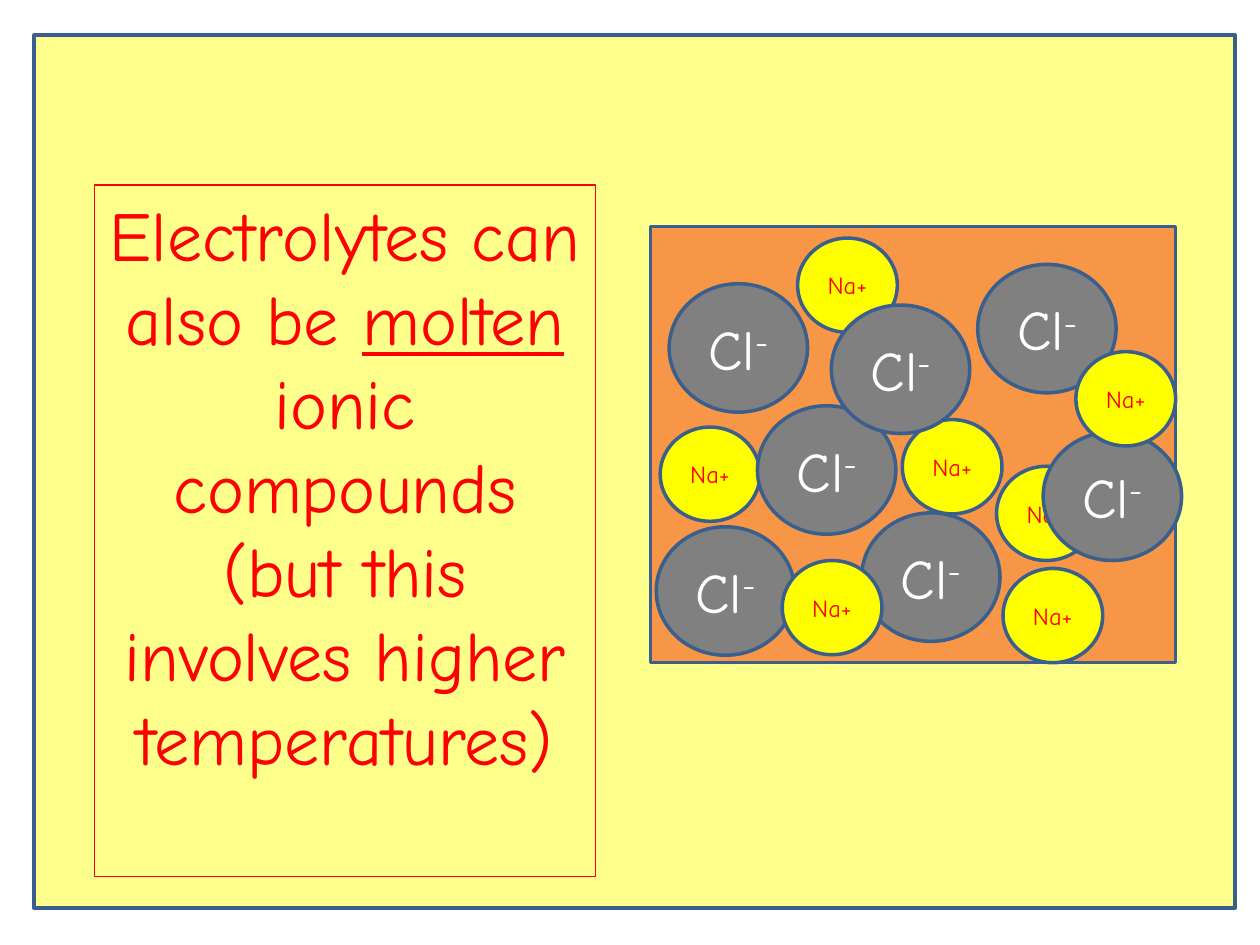
from pptx import Presentation
from pptx.dml.color import RGBColor
from pptx.enum.shapes import MSO_SHAPE
from pptx.enum.text import MSO_ANCHOR, PP_ALIGN
from pptx.util import Cm, Pt

RECTANGLE, OVAL = MSO_SHAPE.RECTANGLE, MSO_SHAPE.OVAL
CENTER, MIDDLE = PP_ALIGN.CENTER, MSO_ANCHOR.MIDDLE
FONT = "Comic Neue"
BLUE, RED = "3A5F8C", "FF0000"

prs = Presentation()
prs.slide_width, prs.slide_height = Cm(25.4), Cm(19.05)
slide = prs.slides.add_slide(prs.slide_layouts[6])


def add_filled(preset, left, top, width, height, fill):
    """Add a preset shape with a solid fill and the common blue outline."""
    shape = slide.shapes.add_shape(preset, Cm(left), Cm(top), Cm(width), Cm(height))
    shape.shadow.inherit = False
    shape.fill.solid()
    shape.fill.fore_color.rgb = RGBColor.from_string(fill)
    shape.line.color.rgb = RGBColor.from_string(BLUE)
    shape.line.width = Pt(2)
    return shape


def add_run(paragraph, text, size, color):
    run = paragraph.add_run()
    run.text = text
    run.font.name = FONT
    run.font.size = Pt(size)
    run.font.color.rgb = RGBColor.from_string(color)
    return run


add_filled(RECTANGLE, 0.69, 0.71, 24.21, 17.6, "FFFF8B")

# Statement
statement = slide.shapes.add_textbox(Cm(1.9), Cm(3.73), Cm(10.11), Cm(13.94))
statement.line.color.rgb = RGBColor.from_string(RED)
statement.line.width = Pt(0.75)
statement.text_frame.word_wrap = True
sentence = statement.text_frame.paragraphs[0]
sentence.alignment = CENTER
add_run(sentence, "Electrolytes can also be ", 40, RED)
add_run(sentence, "molten", 40, RED).font.underline = True
add_run(sentence, " ionic compounds (but this involves higher temperatures)", 40, RED)

# Molten salt: ions from back to front
add_filled(RECTANGLE, 13.11, 4.57, 10.59, 8.79, "F79646")

# kind: width, height, fill, symbol, charge, text size, text colour
ION_STYLES = {
    "chloride": (2.79, 2.59, "808080", "Cl", "-", 32, "FFFFFF"),
    "sodium": (2.01, 1.9, "FFFF00", "Na+", "", 14, RED),
}
ions = [
    ("chloride", 13.49, 5.72),
    ("chloride", 19.71, 5.33),
    ("chloride", 17.37, 10.34),
    ("sodium", 18.19, 8.46),
    ("sodium", 20.09, 9.4),
    ("sodium", 13.31, 8.61),
    ("chloride", 15.27, 8.18),
    ("chloride", 13.23, 10.62),
    ("chloride", 21.03, 8.71),
    ("sodium", 16.08, 4.8),
    ("sodium", 20.22, 11.46),
    ("sodium", 21.69, 7.09),
    ("chloride", 16.76, 6.15),
    ("sodium", 15.77, 11.3),
]
for kind, left, top in ions:
    width, height, fill, symbol, charge, size, color = ION_STYLES[kind]
    ion = add_filled(OVAL, left, top, width, height, fill)
    ion.text_frame.vertical_anchor = MIDDLE
    label = ion.text_frame.paragraphs[0]
    label.alignment = CENTER
    add_run(label, symbol, size, color)
    if charge:
        superscript = add_run(label, charge, size, color)
        superscript.font._element.set("baseline", "30000")

prs.save("out.pptx")
